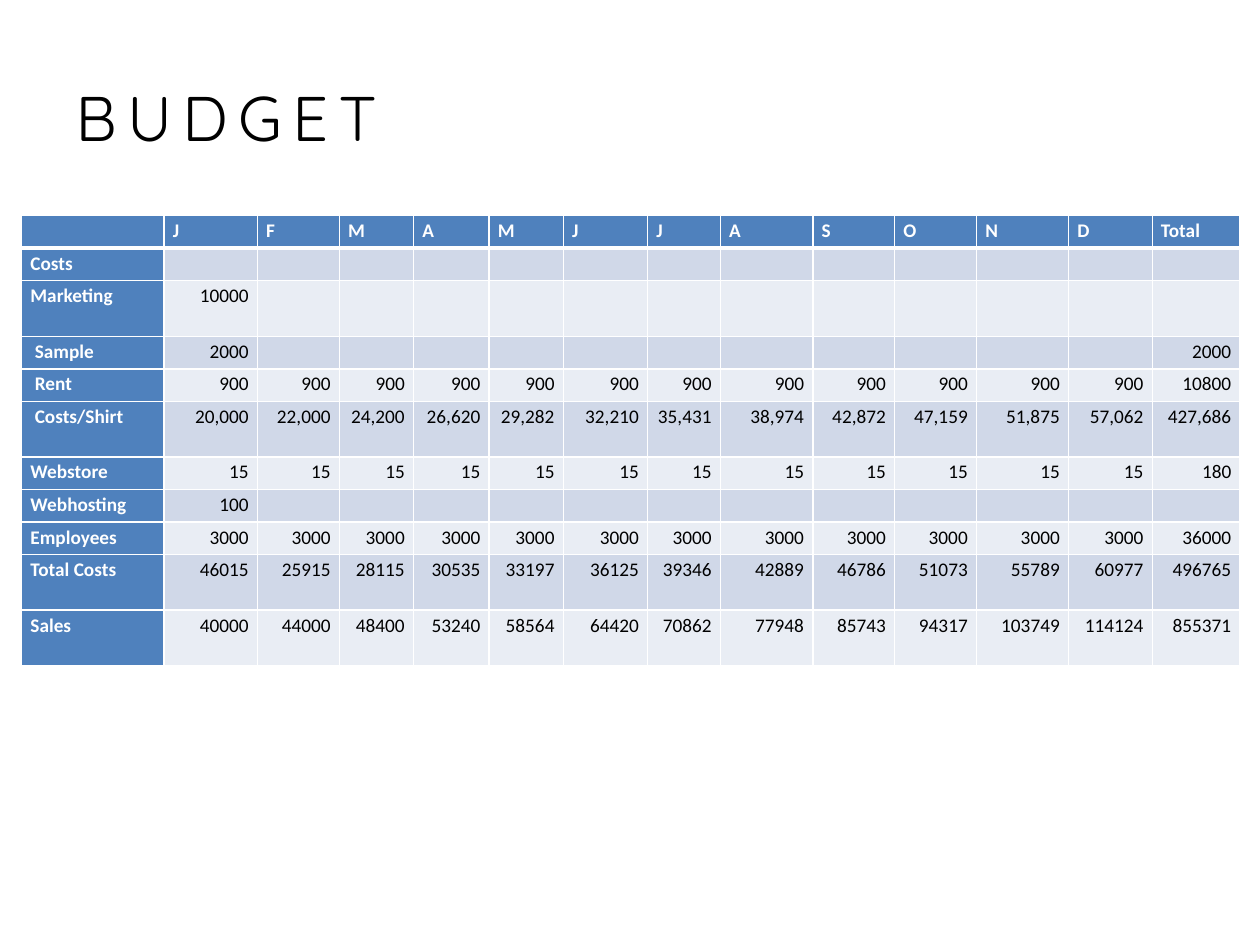
from lxml.etree import SubElement
from pptx import Presentation
from pptx.dml.color import RGBColor
from pptx.enum.text import MSO_ANCHOR, MSO_AUTO_SIZE, PP_ALIGN
from pptx.oxml.ns import qn
from pptx.util import Pt

BLUE, WHITE, BLACK = "4F81BD", "FFFFFF", "000000"
BANDS = ["E9EDF4", "D0D8E8"]
SIZE = 11
MONTHS = 12
WIDTHS = [81.4, 53.4, 46.8, 42.4, 43.2, 42.4, 48.2, 41.6,
          52.8, 46.8, 46.8, 52.6, 47.8, 50.2]
LOW, HIGH = 18.6, 31.8

# Label, label indent, row height, values from January to the total
ROWS = [
    ("", 0, LOW, [*"JFMAMJJASOND", "Total"]),
    ("Costs", 0, LOW, []),
    ("Marketing", 0, HIGH, ["10000"]),
    ("Sample", 2.5, LOW, ["2000"] + [""] * (MONTHS - 1) + ["2000"]),
    ("Rent", 2.5, LOW, ["900"] * MONTHS + ["10800"]),
    ("Costs/Shirt", 2.5, HIGH,
     "20,000 22,000 24,200 26,620 29,282 32,210 35,431 "
     "38,974 42,872 47,159 51,875 57,062 427,686".split()),
    ("Webstore", 0, LOW, ["15"] * MONTHS + ["180"]),
    ("Webhosting", 0, LOW, ["100"]),
    ("Employees", 0, LOW, ["3000"] * MONTHS + ["36000"]),
    ("Total Costs", 0, HIGH,
     "46015 25915 28115 30535 33197 36125 39346 "
     "42889 46786 51073 55789 60977 496765".split()),
    ("Sales", 0, HIGH,
     "40000 44000 48400 53240 58564 64420 70862 "
     "77948 85743 94317 103749 114124 855371".split()),
]


def color(code):
    return RGBColor.from_string(code)


def add_title(slide, text):
    title = slide.shapes.title
    title.left, title.top = Pt(36), Pt(41)
    title.width, title.height = Pt(648), Pt(51)
    frame = title.text_frame
    frame.text = text
    frame.word_wrap = True
    frame.auto_size = MSO_AUTO_SIZE.SHAPE_TO_FIT_TEXT
    frame.vertical_anchor = MSO_ANCHOR.MIDDLE
    para = frame.paragraphs[0]
    para.alignment = PP_ALIGN.LEFT
    para.font.name, para.font.size = "Quicksand", Pt(36)
    para.font.color.rgb = color(BLACK)
    # Letter spacing, in hundredths of a point
    para.runs[0].font._element.set("spc", "600")


def add_edges(cell, row):
    props = cell._tc.get_or_add_tcPr()
    thick = {(0, "B"), (1, "T")}
    for side in "LRTB":
        width = 3 if (row, side) in thick else 1
        line = SubElement(props, qn(f"a:ln{side}"), w=str(Pt(width)))
        fill = SubElement(line, qn("a:solidFill"))
        SubElement(fill, qn("a:srgbClr"), val=WHITE)


def fill_cell(cell, text, row, col, indent):
    head = row == 0 or col == 0
    add_edges(cell, row)
    cell.fill.solid()
    cell.fill.fore_color.rgb = color(BLUE if head else BANDS[row % 2])
    cell.margin_left, cell.margin_right = Pt(5 + indent), Pt(5)
    cell.margin_top = cell.margin_bottom = 0
    cell.text = text
    para = cell.text_frame.paragraphs[0]
    para.alignment = PP_ALIGN.LEFT if head else PP_ALIGN.RIGHT
    para.line_spacing = 1.15
    para.font.name, para.font.size = "Calibri", Pt(SIZE)
    para.font.bold = head
    para.font.color.rgb = color(WHITE if head else BLACK)
    if not text:
        # Keeps empty cells from stretching the row
        SubElement(para._p, qn("a:endParaRPr"), sz=str(SIZE * 100))


def add_budget(slide):
    frame = slide.shapes.add_table(
        len(ROWS), len(WIDTHS), Pt(12.4), Pt(123.2),
        Pt(sum(WIDTHS)), Pt(sum(row[2] for row in ROWS)))
    table = frame.table
    table.first_col = True
    for col, width in enumerate(WIDTHS):
        table.columns[col].width = Pt(width)
    for row, (label, indent, height, values) in enumerate(ROWS):
        table.rows[row].height = Pt(height)
        texts = [label, *values]
        texts += [""] * (len(WIDTHS) - len(texts))
        for col, text in enumerate(texts):
            fill_cell(table.cell(row, col), text, row, col,
                      0 if col else indent)


def main():
    deck = Presentation()
    deck.slide_width, deck.slide_height = Pt(720), Pt(540)
    slide = deck.slides.add_slide(deck.slide_layouts[5])
    add_title(slide, "BUDGET")
    add_budget(slide)
    deck.save("out.pptx")


if __name__ == "__main__":
    main()
